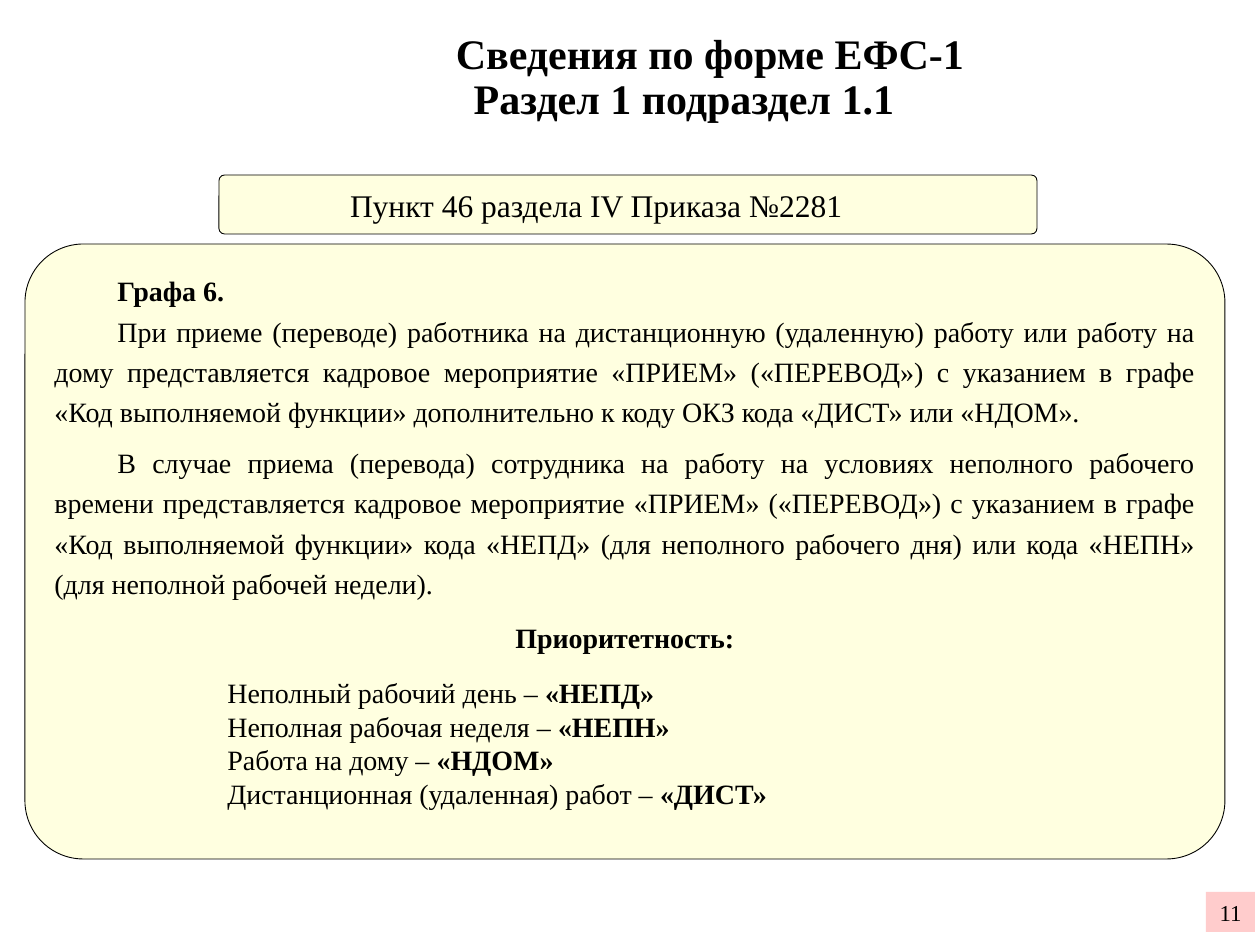
"""Builds the slide on section 1.1 of the EFS-1 form."""
from lxml import etree
from pptx import Presentation
from pptx.dml.color import RGBColor
from pptx.enum.shapes import MSO_SHAPE
from pptx.enum.text import MSO_ANCHOR, PP_ALIGN
from pptx.oxml.ns import qn
from pptx.util import Pt

PX = 914400 // 126
LEFT, CENTER, JUSTIFY = PP_ALIGN.LEFT, PP_ALIGN.CENTER, PP_ALIGN.JUSTIFY
TOP, MIDDLE = MSO_ANCHOR.TOP, MSO_ANCHOR.MIDDLE
RECT, ROUND = MSO_SHAPE.RECTANGLE, MSO_SHAPE.ROUNDED_RECTANGLE
FONT = "Times New Roman"
COLORS = {"text": "000000", "panel": "FFFFCC", "number": "FFCCCC"}

TITLE = [("Сведения по форме ЕФС-1", {"margin": 40}),
         ("Раздел 1 подраздел 1.1", {"right": 12})]
SOURCE = "Пункт 46 раздела IV Приказа №2281"
HEADING = "Графа 6."
RULES = [
    "При приеме (переводе) работника на дистанционную (удаленную) работу или работу на дому "
    "представляется кадровое мероприятие «ПРИЕМ» («ПЕРЕВОД») с указанием в графе «Код "
    "выполняемой функции» дополнительно к коду ОКЗ кода «ДИСТ» или «НДОМ».",
    "В случае приема (перевода) сотрудника на работу на условиях неполного рабочего времени "
    "представляется кадровое мероприятие «ПРИЕМ» («ПЕРЕВОД») с указанием в графе «Код "
    "выполняемой функции» кода «НЕПД» (для неполного рабочего дня) или кода «НЕПН» (для "
    "неполной рабочей недели).",
]
PRIORITY = "Приоритетность:"
CODES = [
    ("Неполный рабочий день – ", "«НЕПД»"),
    ("Неполная рабочая неделя – ", "«НЕПН»"),
    ("Работа на дому – ", "«НДОМ»"),
    ("Дистанционная (удаленная) работ – ", "«ДИСТ»"),
]
NUMBER = "11"


def write(tf, text, size=16, bold=False, align=LEFT, spacing=None, before=0, after=0,
          margin=0, right=0, indent=0, tail=""):
    """Adds one paragraph, with an optional bold tail."""
    p = tf.add_paragraph() if tf.text else tf.paragraphs[0]
    p.alignment, p.line_spacing = align, spacing
    p.space_before, p.space_after = Pt(before), Pt(after)
    pPr = p._p.get_or_add_pPr()
    for name, value in (("marL", margin), ("marR", right), ("indent", indent)):
        pPr.set(name, str(value * PX))
    for part, weight in ((text, bold), (tail, True)):
        if part:
            r = p.add_run()
            r.text = part
            r.font.name, r.font.size, r.font.bold = FONT, Pt(size), weight
            r.font.color.rgb = RGBColor.from_string(COLORS["text"])


def place(sp, box):
    sp.left, sp.top, sp.width, sp.height = (v * PX for v in box)


def add_box(s, kind, box, color, anchor):
    sp = s.shapes.add_shape(kind, *(v * PX for v in box))
    sp.shadow.inherit = False
    sp.fill.solid()
    sp.fill.fore_color.rgb = RGBColor.from_string(COLORS[color])
    sp.line.fill.background()
    sp.text_frame.word_wrap = True
    sp.text_frame.vertical_anchor = anchor
    return sp


def add_panel(s, box, anchor):
    sp = add_box(s, ROUND, box, "panel", anchor)
    sp.adjustments[0] = 0.095
    rgb = sp._element.spPr.find(qn("a:solidFill")).find(qn("a:srgbClr"))
    etree.SubElement(rgb, qn("a:alpha")).set("val", "60000")
    sp.line.color.rgb = RGBColor.from_string(COLORS["text"])
    sp.line.width = Pt(0.5)
    return sp.text_frame


def main():
    prs = Presentation()
    prs.slide_width, prs.slide_height = 1260 * PX, 945 * PX
    s = prs.slides.add_slide(prs.slide_layouts[5])

    number = add_box(s, RECT, (1206, 892, 49, 40), "number", MIDDLE)
    write(number.text_frame, NUMBER, size=13, align=CENTER)

    title = s.shapes.title
    place(title, (184, 26, 1012, 105))
    tf = title.text_frame
    tf.word_wrap, tf.vertical_anchor = True, MIDDLE
    for text, margins in TITLE:
        write(tf, text, size=24, bold=True, align=CENTER, spacing=0.9, **margins)

    tf = add_panel(s, (219, 175, 818, 59), MIDDLE)
    write(tf, SOURCE, size=18, margin=117)

    tf = add_panel(s, (25, 244, 1200, 615), TOP)
    write(tf, HEADING, bold=True, spacing=1.2, indent=63)
    for i, rule in enumerate(RULES):
        write(tf, rule, align=JUSTIFY, spacing=1.2, before=6 * i, indent=63)
    write(tf, PRIORITY, bold=True, align=CENTER, before=12, after=6)
    for i, (label, code) in enumerate(CODES):
        write(tf, label, tail=code, align=JUSTIFY, before=0 if i else 6, indent=173)

    prs.save("out.pptx")


if __name__ == "__main__":
    main()
